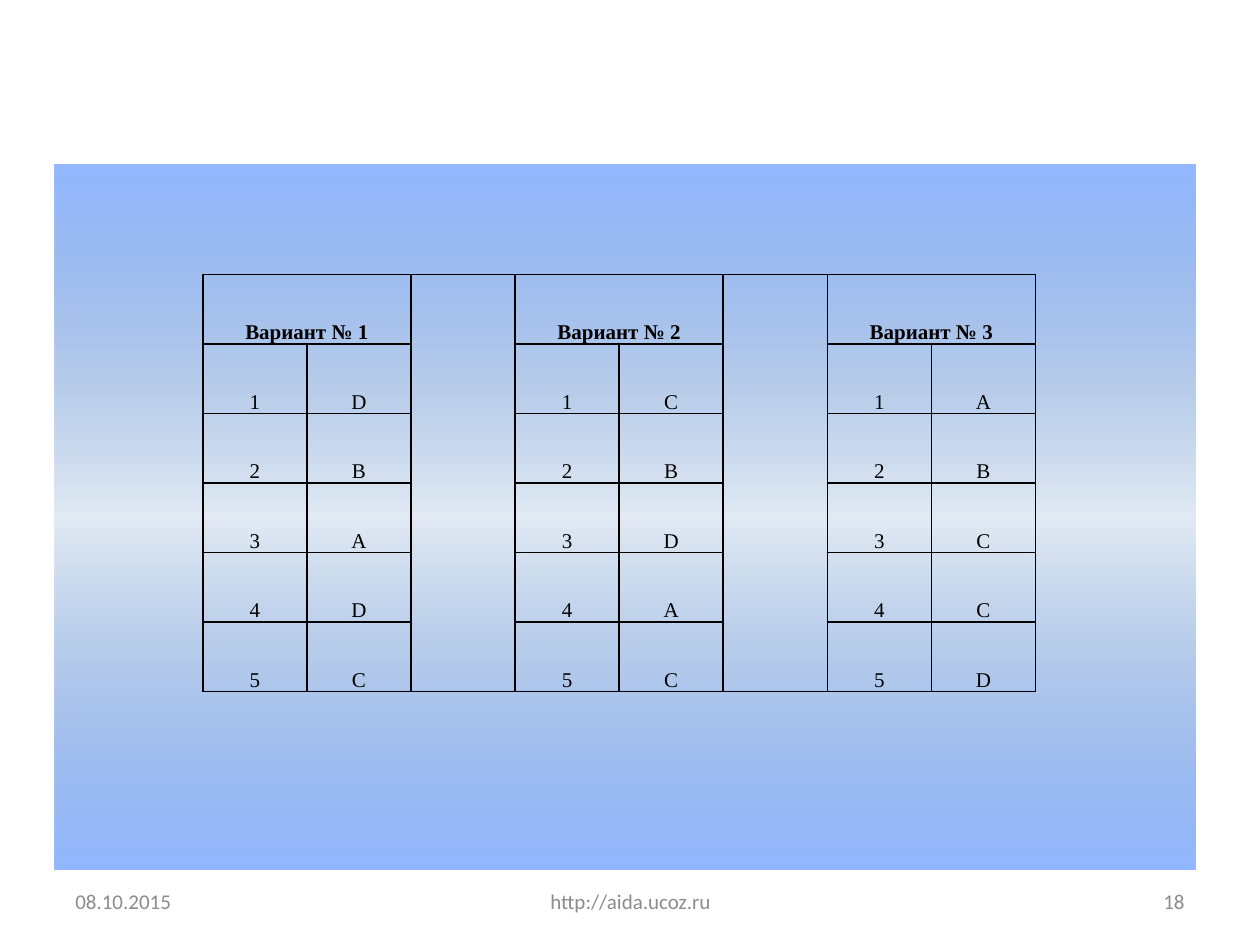
from lxml.etree import SubElement
from pptx import Presentation
from pptx.dml.color import RGBColor
from pptx.enum.shapes import MSO_SHAPE
from pptx.enum.text import MSO_ANCHOR, PP_ALIGN
from pptx.oxml.ns import qn
from pptx.util import Inches, Pt

HUES = {"edge": "93B7FF", "mid": "4F81BD", "ink": "000000", "foot": "8C8C8C"}
STOPS = [(0, "edge", 100), (50, "mid", 16), (100, "edge", 100)]
KEYS = [("Вариант № 1", "DBADC"), ("Вариант № 2", "CBDAC"), ("Вариант № 3", "ABCCD")]
FEET = [
    ("08.10.2015", 0.5, 2.33, PP_ALIGN.LEFT),
    ("http://aida.ucoz.ru", 3.42, 3.17, PP_ALIGN.CENTER),
    ("18", 7.17, 2.33, PP_ALIGN.RIGHT),
]
HEAD = {"name": "Times New Roman", "size": Pt(12), "bold": True}
BODY = {**HEAD, "bold": False}
FOOT = {"name": "Calibri", "size": Pt(12)}
CELL = {
    "vertical_anchor": MSO_ANCHOR.BOTTOM,
    "margin_left": Inches(0.07),
    "margin_right": Inches(0.07),
    "margin_top": 0,
    "margin_bottom": 0,
}
ROWS, COLS = 6, 8


def apply(item, form):
    for name, value in form.items():
        setattr(item, name, value)


def write(frame, text, form, hue, align):
    para = frame.paragraphs[0]
    para.alignment = align
    run = para.add_run()
    run.text = text
    apply(run.font, form)
    run.font.color.rgb = RGBColor.from_string(HUES[hue])
    return para


def add_hue(parent, hue):
    return SubElement(parent, qn("a:srgbClr"), val=HUES[hue])


def add_panel(slide):
    box = [Inches(v) for v in (0.43, 1.31, 9.06, 5.59)]
    panel = slide.shapes.add_shape(MSO_SHAPE.RECTANGLE, *box)
    panel.shadow.inherit = False
    panel.line.fill.background()
    panel.fill.gradient()
    panel.fill.gradient_angle = 90
    stops = panel.fill._fill._gradFill.find(qn("a:gsLst"))
    for old in list(stops):
        stops.remove(old)
    for pos, hue, alpha in STOPS:
        stop = SubElement(stops, qn("a:gs"), pos=str(pos * 1000))
        SubElement(add_hue(stop, hue), qn("a:alpha"), val=str(alpha * 1000))


def add_feet(slide):
    for text, left, width, align in FEET:
        box = slide.shapes.add_textbox(Inches(left), Inches(6.95), Inches(width), Inches(0.4))
        apply(box.text_frame, {"word_wrap": True, "vertical_anchor": MSO_ANCHOR.MIDDLE})
        write(box.text_frame, text, FOOT, "foot", align)


def add_keys(slide):
    box = [Inches(v) for v in (1.61, 2.18, 6.61, 3.31)]
    table = slide.shapes.add_table(ROWS, COLS, *box).table
    apply(table, {"first_row": False, "horz_banding": False})
    for cell in table.iter_cells():
        apply(cell, CELL)
        props = cell._tc.get_or_add_tcPr()
        for side in ("lnL", "lnR", "lnT", "lnB"):
            line = SubElement(props, qn("a:" + side), w=str(Pt(1)))
            add_hue(SubElement(line, qn("a:solidFill")), "ink")
        cell.fill.background()

    def put(row, col, text, form):
        frame = table.cell(row, col).text_frame
        write(frame, text, form, "ink", PP_ALIGN.CENTER).line_spacing = 1.15

    for part, (title, marks) in enumerate(KEYS):
        col = part * 3
        table.cell(0, col).merge(table.cell(0, col + 1))
        put(0, col, title, HEAD)
        for row, mark in enumerate(marks, 1):
            put(row, col, str(row), BODY)
            put(row, col + 1, mark, BODY)
        if col + 2 < COLS:
            table.cell(0, col + 2).merge(table.cell(ROWS - 1, col + 2))


def main():
    deck = Presentation()
    apply(deck, {"slide_width": Inches(10), "slide_height": Inches(7.5)})
    slide = deck.slides.add_slide(deck.slide_layouts[6])
    add_panel(slide)
    add_feet(slide)
    add_keys(slide)
    deck.save("out.pptx")


if __name__ == "__main__":
    main()
